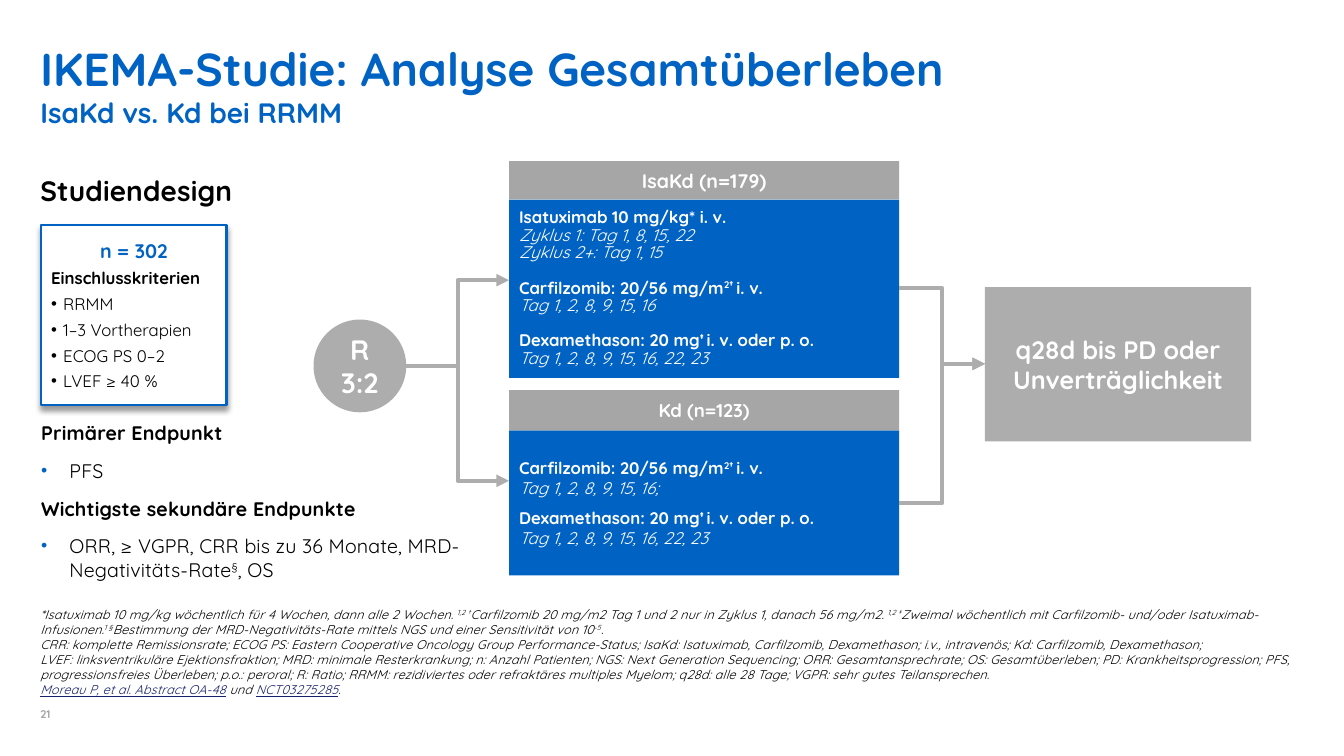
"""Build the IKEMA study design slide with its two treatment arms."""
from lxml import etree
from pptx import Presentation
from pptx.dml.color import RGBColor
from pptx.enum.shapes import MSO_CONNECTOR, MSO_SHAPE
from pptx.enum.text import MSO_ANCHOR, PP_ALIGN
from pptx.oxml.ns import qn
from pptx.util import Inches, Pt

RECTANGLE, OVAL, ELBOW = MSO_SHAPE.RECTANGLE, MSO_SHAPE.OVAL, MSO_CONNECTOR.ELBOW
TOP, MIDDLE, BOTTOM = MSO_ANCHOR.TOP, MSO_ANCHOR.MIDDLE, MSO_ANCHOR.BOTTOM
CENTER = PP_ALIGN.CENTER
FONT = "Quicksand"
COLORS = {"blue": "0063C3", "gray": "A6A6A6", "light": "ADADAD", "white": "FFFFFF",
          "black": "000000", "link": "151F6D"}

presentation = Presentation()
presentation.slide_width, presentation.slide_height = Inches(13.33), Inches(7.5)
slide = presentation.slides.add_slide(presentation.slide_layouts[6])
COLUMN, ROW = presentation.slide_width / 100, presentation.slide_height / 100


def add_box(place, kind=None, fill=None, anchor=TOP, inset=(0, 0)):
    """Add a text box or a preset shape, placed in per cent of the slide."""
    left, top, width, height = (int(share * unit) for share, unit in zip(place, (COLUMN, ROW) * 2))
    if kind is None:
        shape = slide.shapes.add_textbox(left, top, width, height)
    else:
        shape = slide.shapes.add_shape(kind, left, top, width, height)
        shape.shadow.inherit = False
        shape.fill.solid()
        shape.fill.fore_color.rgb = RGBColor.from_string(COLORS[fill])
        shape.line.fill.background()
    frame = shape.text_frame
    frame.word_wrap = True
    frame.vertical_anchor = anchor
    frame.margin_left = frame.margin_right = Inches(inset[0])
    frame.margin_top = frame.margin_bottom = Inches(inset[1])
    return shape


def write(shape, paragraphs, size, color, align=None, tracking=None, line_spacing=None):
    """Fill a shape with paragraphs, each a list of runs and a dict of options."""
    frame = shape.text_frame
    for index, (runs, options) in enumerate(paragraphs):
        paragraph = frame.paragraphs[0] if index == 0 else frame.add_paragraph()
        paragraph.alignment = options.get("align", align)
        paragraph.line_spacing = line_spacing
        if "before" in options:
            paragraph.space_before = Pt(options["before"])
        if "after" in options:
            paragraph.space_after = Pt(options["after"])
        if "indent" in options:
            properties = paragraph._p.get_or_add_pPr()
            properties.set("marL", str(Inches(options["indent"])))
            properties.set("indent", str(-Inches(options["indent"])))
            bullet_color = etree.SubElement(properties, qn("a:buClr"))
            etree.SubElement(bullet_color, qn("a:srgbClr"), val=COLORS[options["bullet"]])
            etree.SubElement(properties, qn("a:buSzPct"), val=options.get("share", "100000"))
            etree.SubElement(properties, qn("a:buFont"), typeface="Arial")
            etree.SubElement(properties, qn("a:buChar"), char="•")
        for text, flags in runs:
            for number, line in enumerate(text.split("\n")):
                if number:
                    paragraph.add_line_break()
                if not line:
                    continue
                run = paragraph.add_run()
                run.text = line
                font = run.font
                font.name, font.size = FONT, Pt(options.get("size", size))
                font.bold, font.italic = "b" in flags, "i" in flags
                font.underline = "u" in flags
                run_color = "link" if "u" in flags else options.get("color", color)
                font.color.rgb = RGBColor.from_string(COLORS[run_color])
                if "^" in flags:
                    font._element.set("baseline", "30000")
                if tracking:
                    font._element.set("spc", str(tracking))


write(add_box((3, 92.27, 3.38, 3.07), anchor=BOTTOM), [([("21", "b")], {})], 8, "gray")

gap = {"after": 10}
endpoint = {"after": 10, "indent": 0.28, "bullet": "blue", "share": "90000"}
write(add_box((3.07, 55.73, 31.57, 23.87)), [
    ([("Primärer Endpunkt", "b")], gap),
    ([("PFS", "")], endpoint),
    ([("Wichtigste sekundäre Endpunkte", "b")], gap),
    ([("ORR, ≥ VGPR, CRR bis zu 36 Monate, MRD-Negativitäts-Rate", ""), ("§", "^"),
      (", OS", "")], endpoint),
], 14, "black", tracking=10)

write(add_box((3, 84.53, 93.47, 7.73), anchor=BOTTOM), [
    ([("*Isatuximab 10 mg/kg wöchentlich für 4 Wochen, dann alle 2 Wochen. ", "i"),
      ("1,2 †", "i^"),
      ("Carfilzomib 20 mg/m2 Tag 1 und 2 nur in Zyklus 1, danach 56 mg/m2. ", "i"),
      ("1,2 ‡", "i^"),
      ("Zweimal wöchentlich mit Carfilzomib- und/oder Isatuximab-Infusionen.", "i"),
      ("1 §", "i^"),
      ("Bestimmung der MRD-Negativitäts-Rate mittels NGS und einer Sensitivität von 10", "i"),
      ("-5", "i^"), (".", "i")], {}),
    ([("CRR: komplette Remissionsrate; ECOG PS: Eastern Cooperative Oncology Group "
       "Performance-Status; IsaKd: Isatuximab, Carfilzomib, Dexamethason; i.v., intravenös; "
       "Kd: Carfilzomib, Dexamethason;\n"
       "LVEF: linksventrikuläre Ejektionsfraktion; MRD: minimale Resterkrankung; "
       "n: Anzahl Patienten; NGS: Next Generation Sequencing; ORR: Gesamtansprechrate; "
       "OS: Gesamtüberleben; PD: Krankheitsprogression; PFS, progressionsfreies Überleben; "
       "p.o.: peroral; R: Ratio; RRMM: rezidiviertes oder refraktäres multiples Myelom; "
       "q28d: alle 28 Tage; VGPR: sehr gutes Teilansprechen.", "i")], {}),
    ([("Moreau P, et al. Abstract OA-48", "iu"), (" und ", "i"), ("NCT03275285", "iu"),
      (".", "i")], {}),
], 9, "black", tracking=10)

carfilzomib = [("Carfilzomib: 20/56 mg/m", "b"), ("2† ", "b^"), ("i. v.", "b")]
dexamethasone = [("Dexamethason: 20 mg", "b"), ("‡ ", "b^"), ("i. v. oder p. o.", "b")]
dexamethasone_days = [("Tag 1, 2, 8, 9, 15, 16, 22, 23", "i")]
isakd_doses = [
    ([("Isatuximab 10 mg/kg* i. v.", "b")], {}),
    ([("Zyklus 1: Tag 1, 8, 15, 22", "i")], {}),
    ([("Zyklus 2+: Tag 1, 15", "i")], {}),
    (carfilzomib, {"before": 12.5}),
    ([("Tag 1, 2, 8, 9, 15, 16", "i")], {}),
    (dexamethasone, {"before": 12.5}),
    (dexamethasone_days, {}),
]
kd_doses = [
    (carfilzomib, {}),
    ([("Tag 1, 2, 8, 9, 15, 16;", "i")], {}),
    (dexamethasone, {"before": 7}),
    (dexamethasone_days, {}),
]
arms = [
    ("IsaKd (n=179)", 14, 21.33, 5.07, 23.6, isakd_doses, 0.87),
    ("Kd (n=123)", 13.3, 51.6, 5.33, 19.2, kd_doses, None),
]
for name, name_size, top, header_height, dose_height, doses, spacing in arms:
    dose_box = add_box((37.88, top + header_height, 29.03, dose_height),
                       RECTANGLE, "blue", MIDDLE, (0.1, 0.05))
    write(dose_box, doses, 12, "white", line_spacing=spacing)
    header = add_box((37.88, top, 29.03, header_height), RECTANGLE, "gray", MIDDLE, (0.08, 0.04))
    write(header, [([(name, "b")], {})], name_size, "white", CENTER)

outcome = add_box((73.29, 38, 19.8, 20.4), RECTANGLE, "light", MIDDLE, (0.08, 0.04))
write(outcome, [([("q28d bis PD oder Unverträglichkeit", "b")], {})], 18, "white", CENTER)

write(add_box((3, 22.93, 17.4, 5.33)), [([("Studiendesign", "b")], {})], 20, "black", tracking=10)

title = add_box((3, 5.33, 94, 11.87))
write(title, [
    ([("IKEMA-Studie: Analyse Gesamtüberleben", "b")], {"size": 33}),
    ([("IsaKd vs. Kd bei RRMM", "b")], {}),
], 20, "blue")

randomization = add_box((23.33, 42.27, 6.9, 12.27), OVAL, "light", MIDDLE, (0.1, 0.05))
write(randomization, [([("R", "b")], {}), ([("3:2", "b")], {})], 20, "white", CENTER)

arrows = [
    (66.92, 38.13, 73.29, 48.13),
    (66.92, 66.53, 73.29, 48.13),
    (30.23, 48.4, 37.88, 63.6),
    (30.23, 48.4, 37.88, 37.07),
]
for start_x, start_y, end_x, end_y in arrows:
    arrow = slide.shapes.add_connector(ELBOW, int(start_x * COLUMN), int(start_y * ROW),
                                       int(end_x * COLUMN), int(end_y * ROW))
    arrow.line.color.rgb = RGBColor.from_string(COLORS["light"])
    arrow.line.width = Pt(3)
    etree.SubElement(arrow.line._get_or_add_ln(), qn("a:tailEnd"), type="triangle")
    etree.SubElement(arrow._element.spPr, qn("a:effectLst"))

criteria = add_box((3.07, 29.73, 13.8, 23.87), RECTANGLE, "white", MIDDLE, (0.1, 0.05))
criteria.line.color.rgb = RGBColor.from_string(COLORS["blue"])
criteria.line.width = Pt(1.75)
effects = criteria._element.spPr.find(qn("a:effectLst"))
shadow = etree.SubElement(effects, qn("a:outerShdw"), blurRad=str(Pt(4)), dist=str(Pt(3)),
                          dir="5400000", algn="t", rotWithShape="0")
shadow_color = etree.SubElement(shadow, qn("a:srgbClr"), val=COLORS["black"])
etree.SubElement(shadow_color, qn("a:alpha"), val="40000")
criterion = {"before": 4, "indent": 0.12, "bullet": "black"}
write(criteria, [
    ([("n = 302", "b")], {"align": CENTER, "after": 4, "size": 14, "color": "blue"}),
    ([("Einschlusskriterien", "b")], {}),
    *[([(text, "")], criterion)
      for text in ("RRMM", "1–3 Vortherapien", "ECOG PS 0–2", "LVEF ≥ 40 %")],
], 12, "black")

presentation.save("out.pptx")
